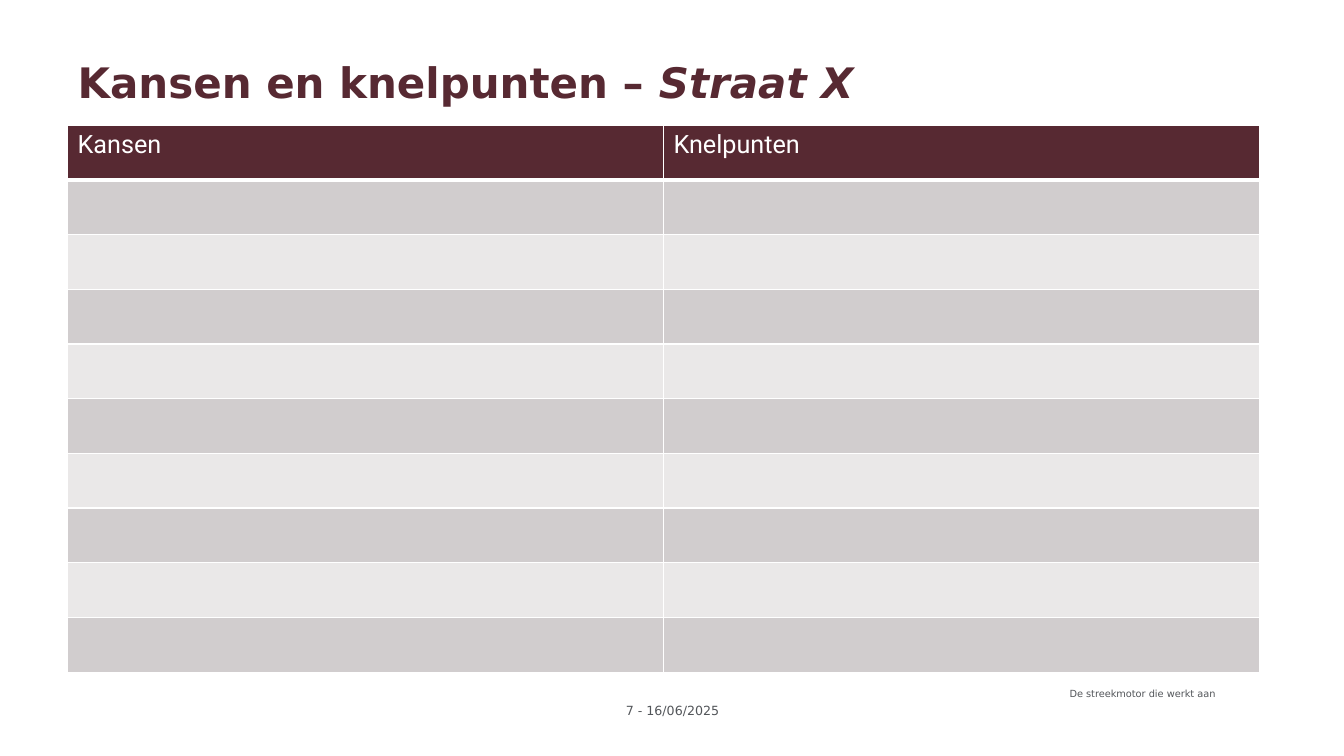
from lxml.etree import SubElement
from pptx import Presentation
from pptx.dml.color import RGBColor
from pptx.enum.text import MSO_ANCHOR, PP_ALIGN
from pptx.oxml.ns import qn
from pptx.util import Inches, Pt

MAROON, GREY, WHITE = "572932", "53565A", "FFFFFF"
BANDS = ("D1CDCE", "EAE8E8")
HEADINGS = ("Kansen", "Knelpunten")
ROWS = 10
LEFT, TABLE_TOP = 0.67, 1.24
TABLE_WIDTH, TABLE_HEIGHT = 11.82, 5.43


def color(hex_code):
    return RGBColor.from_string(hex_code)


def write(frame, text, *, size, font, fill, bold=False, italic=False,
          align=PP_ALIGN.LEFT):
    """Append a formatted run to the first paragraph of a text frame."""
    paragraph = frame.paragraphs[0]
    paragraph.alignment = align
    run = paragraph.add_run()
    run.text = text
    run.font.size = Pt(size)
    run.font.name = font
    run.font.bold = bold
    run.font.italic = italic
    run.font.color.rgb = color(fill)


def add_title(slide, text, emphasis):
    title = slide.shapes.title
    title.left, title.top = Inches(LEFT), Inches(0.5)
    title.width, title.height = Inches(12), Inches(0.63)
    frame = title.text_frame
    frame.word_wrap = True
    frame.vertical_anchor = MSO_ANCHOR.MIDDLE
    style = dict(size=30, font="DejaVu Sans", fill=MAROON, bold=True)
    write(frame, text, **style)
    write(frame, emphasis, italic=True, **style)


def add_footer(slide, text, box, **style):
    frame = slide.shapes.add_textbox(*map(Inches, box)).text_frame
    frame.word_wrap = True
    write(frame, text, font="DejaVu Sans", fill=GREY, **style)


def add_borders(cell, bottom):
    """Draw white cell borders, 1 pt except for the bottom one."""
    properties = cell._tc.get_or_add_tcPr()
    for side, width in (("L", 1), ("R", 1), ("T", 1), ("B", bottom)):
        line = SubElement(properties, qn(f"a:ln{side}"), w=str(Pt(width)))
        solid = SubElement(line, qn("a:solidFill"))
        SubElement(solid, qn("a:srgbClr"), val=WHITE)


def add_comparison(slide):
    table = slide.shapes.add_table(
        ROWS, len(HEADINGS), Inches(LEFT), Inches(TABLE_TOP),
        Inches(TABLE_WIDTH), Inches(TABLE_HEIGHT)).table
    for r in range(ROWS):
        for c, heading in enumerate(HEADINGS):
            cell = table.cell(r, c)
            add_borders(cell, bottom=3 if r == 0 else 1)
            cell.fill.solid()
            cell.fill.fore_color.rgb = color(BANDS[(r - 1) % 2] if r else MAROON)
            if r == 0:
                write(cell.text_frame, heading, size=18, font="Roboto", fill=WHITE)


def main():
    deck = Presentation()
    deck.slide_width, deck.slide_height = Inches(13.33), Inches(7.5)
    slide = deck.slides.add_slide(deck.slide_layouts.get_by_name("Title Only"))
    add_footer(slide, "7 - 16/06/2025", (4.15, 6.92, 5.04, 0.27),
               size=9, align=PP_ALIGN.CENTER)
    add_footer(slide, "De streekmotor die werkt aan", (10.51, 6.77, 2.06, 0.22),
               size=7)
    add_title(slide, "Kansen en knelpunten – ", "Straat X")
    add_comparison(slide)
    deck.save("out.pptx")


if __name__ == "__main__":
    main()
